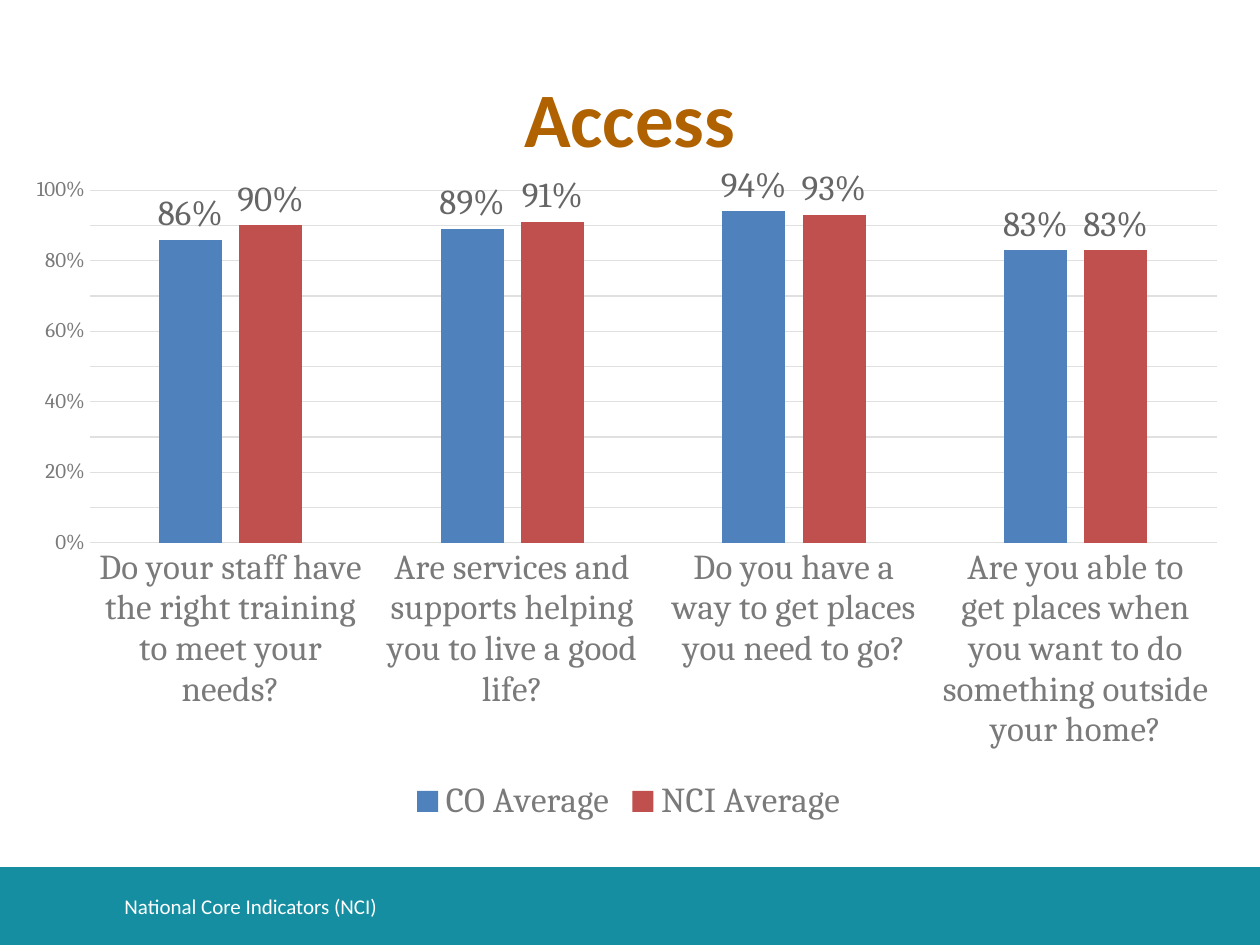
"""Build the Access slide comparing CO and NCI averages in a column chart."""
import copy
import lxml.etree
import pptx
import pptx.chart.data
import pptx.dml.color
import pptx.enum.chart
import pptx.enum.shapes
import pptx.enum.text
import pptx.oxml.ns
import pptx.util
from pptx.util import Cm


def color(value):
    """Turn a hex string into a colour."""
    return pptx.dml.color.RGBColor.from_string(value)


def format_font(font, values):
    """Set font attributes and colour from a dict."""
    for name, value in values.items():
        if name == "color":
            font.color.rgb = color(value)
        else:
            setattr(font, name, value)


presentation = pptx.Presentation()
presentation.slide_width = Cm(25.4)
presentation.slide_height = Cm(19.05)
slide = presentation.slides.add_slide(presentation.slide_layouts[5])

band = slide.shapes.add_shape(
    pptx.enum.shapes.MSO_SHAPE.RECTANGLE, 0, Cm(17.48), Cm(25.4), Cm(1.57))
band.shadow.inherit = False
band.fill.solid()
band.fill.fore_color.rgb = color("168EA2")
band.line.fill.background()

title = slide.shapes.title
footer = slide.shapes.add_textbox(Cm(2.26), Cm(17.75), Cm(18.8), Cm(1.02))
title_place = {"left": Cm(1.27), "top": Cm(0.76), "width": Cm(22.86), "height": Cm(3.18)}
for name, value in title_place.items():
    setattr(title, name, value)

texts = [
    (title, "Access", pptx.enum.text.PP_ALIGN.CENTER,
     {"name": "Calibri", "size": pptx.util.Pt(44), "bold": True, "color": "B06100"}),
    (footer, "National Core Indicators (NCI)", pptx.enum.text.PP_ALIGN.LEFT,
     {"name": "Calibri", "size": pptx.util.Pt(12), "color": "FFFFFF"}),
]
for shape, text, alignment, font_values in texts:
    frame = shape.text_frame
    frame.word_wrap = True
    frame.vertical_anchor = pptx.enum.text.MSO_ANCHOR.MIDDLE
    paragraph = frame.paragraphs[0]
    paragraph.alignment = alignment
    run = paragraph.add_run()
    run.text = text
    format_font(run.font, font_values)

data = pptx.chart.data.CategoryChartData(number_format="0%")
data.categories = [
    "Do your staff have the right training to meet your needs?",
    "Are services and supports helping you to live a good life?",
    "Do you have a way to get places you need to go?",
    "Are you able to get places when you want to do something outside your home?",
]
data.add_series("CO Average", [0.86, 0.89, 0.94, 0.83])
data.add_series("NCI Average", [0.9, 0.91, 0.93, 0.83])
chart = slide.shapes.add_chart(
    pptx.enum.chart.XL_CHART_TYPE.COLUMN_CLUSTERED,
    Cm(0.33), Cm(3.3), Cm(24.69), Cm(13.41), data).chart
chart.has_title = False
chart.has_legend = True
chart.legend.position = pptx.enum.chart.XL_LEGEND_POSITION.BOTTOM
chart.legend.include_in_layout = False

plot = chart.plots[0]
plot_values = {"gap_width": 219, "overlap": -27, "vary_by_categories": False}
for name, value in plot_values.items():
    setattr(plot, name, value)

category_axis, value_axis = chart.category_axis, chart.value_axis
axis_values = {
    "minimum_scale": 0, "maximum_scale": 1, "major_unit": 0.2, "minor_unit": 0.1,
    "has_major_gridlines": True, "has_minor_gridlines": True,
}
for name, value in axis_values.items():
    setattr(value_axis, name, value)
value_axis.tick_labels.number_format = "0%"
value_axis.tick_labels.number_format_is_linked = False
value_axis.format.line.fill.background()
for axis in (category_axis, value_axis):
    axis.major_tick_mark = pptx.enum.chart.XL_TICK_MARK.NONE
    axis.minor_tick_mark = pptx.enum.chart.XL_TICK_MARK.NONE
for item in (category_axis, value_axis.major_gridlines):
    item.format.line.color.rgb = color("E0E0E0")
    item.format.line.width = pptx.util.Pt(0.75)

qualify = pptx.oxml.ns.qn
plot_area = chart.element.find(".//" + qualify("c:plotArea"))
major_grid = plot_area.find(".//" + qualify("c:majorGridlines"))
minor_grid = plot_area.find(".//" + qualify("c:minorGridlines"))
minor_grid.append(copy.deepcopy(major_grid.find(qualify("c:spPr"))))

chart_fonts = [
    (chart.font, 10, "333333"),
    (category_axis.tick_labels.font, 20, "7A7A7A"),
    (value_axis.tick_labels.font, 12, "7A7A7A"),
    (chart.legend.font, 20, "7A7A7A"),
]
for series, fill in zip(plot.series, ("4F81BD", "C0504D")):
    series.format.fill.solid()
    series.format.fill.fore_color.rgb = color(fill)
    labels = series.data_labels
    label_values = {
        "show_value": True, "number_format": "0%", "number_format_is_linked": False,
        "position": pptx.enum.chart.XL_LABEL_POSITION.OUTSIDE_END,
    }
    for name, value in label_values.items():
        setattr(labels, name, value)
    chart_fonts.append((labels.font, 20, "666666"))
for font, size, text_color in chart_fonts:
    format_font(font, {"name": "Cambria", "size": pptx.util.Pt(size), "color": text_color})

for layout in plot_area.findall(qualify("c:layout")):
    plot_area.remove(layout)
layout = lxml.etree.Element(qualify("c:layout"))
manual = lxml.etree.SubElement(layout, qualify("c:manualLayout"))
layout_values = {
    "layoutTarget": "inner", "xMode": "edge", "yMode": "edge",
    "x": "0.06", "y": "0.04", "w": "0.92", "h": "0.53",
}
for name, value in layout_values.items():
    lxml.etree.SubElement(manual, qualify("c:" + name)).set("val", value)
plot_area.insert(0, layout)

presentation.save("out.pptx")
